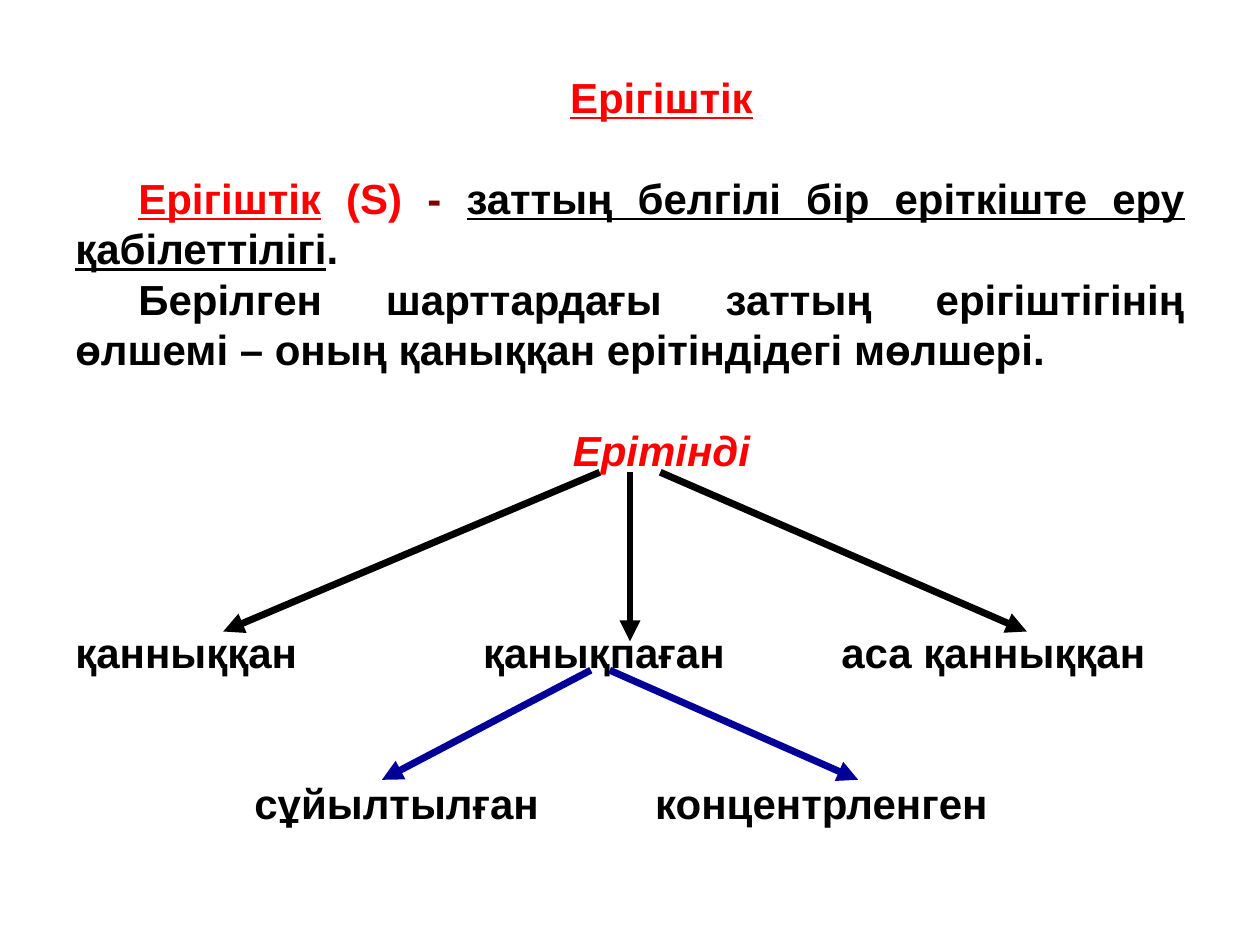
from dataclasses import dataclass

from lxml import etree
from pptx import Presentation
from pptx.dml.color import RGBColor
from pptx.enum import shapes, text
from pptx.oxml import ns
from pptx.util import Cm, Pt

RED = RGBColor(0xFF, 0x00, 0x00)
MAROON = RGBColor(0x80, 0x00, 0x00)
BLACK = RGBColor(0x00, 0x00, 0x00)
NAVY = RGBColor(0x00, 0x00, 0x99)

CENTER = text.PP_ALIGN.CENTER
JUSTIFY = text.PP_ALIGN.JUSTIFY
LEFT = text.PP_ALIGN.LEFT
LINE_PT = 28.8
LINE_CM = LINE_PT / 72 * 2.54
BODY_LEFT, BODY_TOP = 1.27, 1.32
LABEL_WIDTH, LABEL_HEIGHT = 7.2, 1.27


@dataclass
class Run:
    text: str
    color: RGBColor = BLACK
    underline: bool = False


@dataclass
class Para:
    runs: list[Run]
    align: int = JUSTIFY
    indent: float = 1.27
    lines_before: int = 0
    italic: bool = False


@dataclass
class Label:
    """A kind of solution: left edge in centimetres and line of the text grid."""
    text: str
    left: float
    line: int


@dataclass
class Branch:
    """An arrow from a term to one of its kinds, in centimetres."""
    x1: float
    y1: float
    x2: float
    y2: float
    color: RGBColor


PARAS = [
    Para([Run("Ерігіштік", RED, True)], CENTER),
    Para([
        Run("Ерігіштік", RED, True),
        Run(" (S)", RED),
        Run(" - ", MAROON),
        Run("заттың белгілі бір еріткіште еру қабілеттілігі", BLACK, True),
        Run("."),
    ], lines_before=1),
    Para([Run("Берілген шарттардағы заттың ерігіштігінің өлшемі – "
              "оның қаныққан ерітіндідегі мөлшері.")]),
    Para([Run("Ерітінді", RED)], CENTER, lines_before=1, italic=True),
]

LABELS = [
    Label("қанныққан", BODY_LEFT, 11),
    Label("қанықпаған", 9.49, 11),
    Label("аса қанныққан", 16.71, 11),
    Label("сұйылтылған", 4.88, 14),
    Label("концентрленген", 12.96, 14),
]

SOLUTION_Y, KINDS_Y = 9.52, 13.51
BRANCHES = [
    Branch(12.09, SOLUTION_Y, 4.5, 12.73, BLACK),
    Branch(12.7, SOLUTION_Y, 12.7, 12.93, BLACK),
    Branch(13.31, SOLUTION_Y, 20.7, 12.73, BLACK),
    Branch(11.91, KINDS_Y, 7.7, 15.72, NAVY),
    Branch(12.29, KINDS_Y, 17.3, 15.72, NAVY),
]


def write_para(p, para: Para) -> None:
    p.alignment = para.align
    p.line_spacing = Pt(LINE_PT)
    p.space_before = Pt(LINE_PT * para.lines_before)
    pPr = p._p.get_or_add_pPr()
    pPr.set("marL", "0")
    pPr.set("indent", str(Cm(para.indent)))
    p.font.name = "Arial"
    p.font.size = Pt(24)
    p.font.bold = True
    p.font.italic = para.italic
    for run in para.runs:
        r = p.add_run()
        r.text = run.text
        r.font.color.rgb = run.color
        r.font.underline = run.underline


def add_text(s, left: float, top: float, width: float, height: float,
             paras: list[Para]) -> None:
    tf = s.shapes.add_textbox(Cm(left), Cm(top), Cm(width), Cm(height)).text_frame
    tf.word_wrap = True
    for i, para in enumerate(paras):
        write_para(tf.add_paragraph() if i else tf.paragraphs[0], para)


def add_label(s, label: Label) -> None:
    add_text(s, label.left, BODY_TOP + label.line * LINE_CM,
             LABEL_WIDTH, LABEL_HEIGHT, [Para([Run(label.text)], LEFT, 0)])


def draw_branch(s, branch: Branch) -> None:
    line = s.shapes.add_connector(
        shapes.MSO_CONNECTOR.STRAIGHT,
        Cm(branch.x1), Cm(branch.y1), Cm(branch.x2), Cm(branch.y2))
    line.line.color.rgb = branch.color
    line.line.width = Pt(4)
    etree.SubElement(line.line._get_or_add_ln(), ns.qn("a:tailEnd"), type="triangle")
    etree.SubElement(line._element.spPr, ns.qn("a:effectLst"))


def main() -> None:
    prs = Presentation()
    prs.slide_width, prs.slide_height = Cm(25.4), Cm(19.05)
    s = prs.slides.add_slide(prs.slide_layouts[6])
    add_text(s, BODY_LEFT, BODY_TOP, 22.86, 8.4, PARAS)
    for label in LABELS:
        add_label(s, label)
    for branch in BRANCHES:
        draw_branch(s, branch)
    prs.save("out.pptx")


if __name__ == "__main__":
    main()
